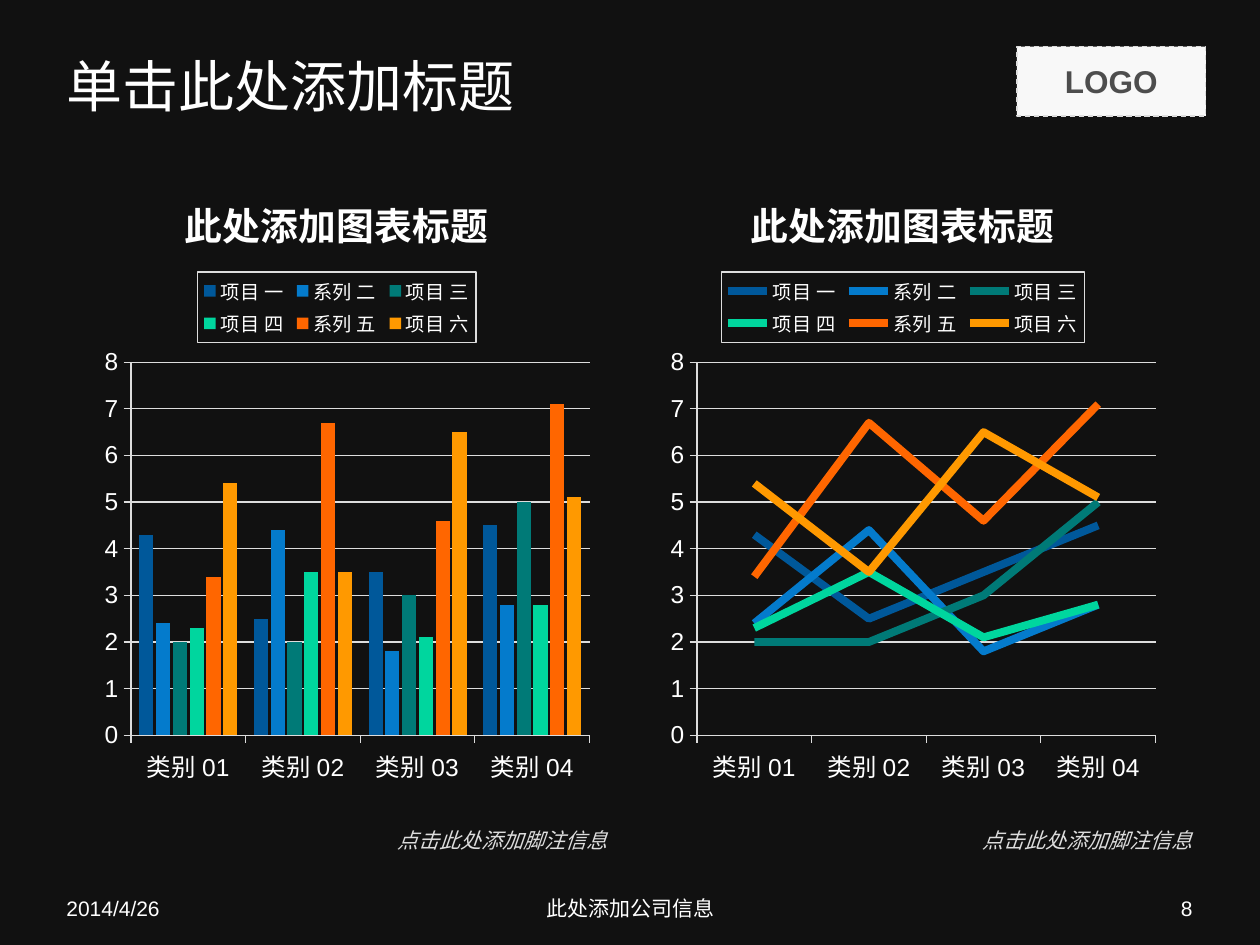
from dataclasses import dataclass
from typing import NamedTuple

from lxml import etree
from pptx import Presentation
from pptx import util as u
from pptx.chart import data as cd
from pptx.dml.color import RGBColor
from pptx.enum import chart as ch, dml, shapes, text
from pptx.oxml.ns import qn


@dataclass(frozen=True)
class Theme:
    back: str = "111111"
    ink: str = "FFFFFF"
    rule: str = "DDDDDD"
    box: str = "F8F8F8"
    mark: str = "4D4D4D"
    head: str = "Montserrat"
    body: str = "Arial"
    title: float = 32
    logo: float = 18
    chart: float = 21.6
    axis: float = 14
    small: float = 12
    key: float = 11
    hair: float = 0.75
    thick: float = 4.5


class Box(NamedTuple):
    left: float
    top: float
    width: float
    height: float

    def cm(self) -> list:
        return [u.Cm(n) for n in self]


class Label(NamedTuple):
    words: str
    box: Box
    side: text.PP_ALIGN
    size: float
    font: str = "Arial"


class Item(NamedTuple):
    name: str
    color: str
    vals: tuple


class Plot(NamedTuple):
    kind: ch.XL_CHART_TYPE
    left: float


T = Theme()
LEFT, MID, RIGHT = text.PP_ALIGN.LEFT, text.PP_ALIGN.CENTER, text.PP_ALIGN.RIGHT
EDGE, FOOT, NOTE = 24.29, 17.93, 4.78
HALF = 12.5

LABELS = [
    Label("单击此处添加标题", Box(1.09, 0.71, 23.2, 2), LEFT, T.title, T.head),
    Label("2014/4/26", Box(1.09, FOOT, 5.92, 0.74), LEFT, T.small),
    Label("此处添加公司信息", Box(8.69, FOOT, 8.05, 0.74), MID, T.small),
    Label("8", Box(EDGE - 5.92, FOOT, 5.92, 0.74), RIGHT, T.small),
]
PLOTS = [
    Plot(ch.XL_CHART_TYPE.COLUMN_CLUSTERED, 1.09),
    Plot(ch.XL_CHART_TYPE.LINE, HALF),
]
CATS = [f"类别 {n:02}" for n in range(1, 5)]
ITEMS = [
    Item("项目 一", "00589A", (4.3, 2.5, 3.5, 4.5)),
    Item("系列 二", "047BCC", (2.4, 4.4, 1.8, 2.8)),
    Item("项目 三", "007A77", (2, 2, 3, 5)),
    Item("项目 四", "00D69E", (2.3, 3.5, 2.1, 2.8)),
    Item("系列 五", "FF6600", (3.4, 6.7, 4.6, 7.1)),
    Item("项目 六", "FF9900", (5.4, 3.5, 6.5, 5.1)),
]
INNER = {"layoutTarget": "inner", "xMode": "edge", "yMode": "edge",
         "x": 0.136, "y": 0.301, "w": 0.811, "h": 0.57}


def rgb(code: str) -> RGBColor:
    return RGBColor.from_string(code)


def style(font, size: float, color: str, face: str = T.body,
          bold: bool = False, slant: bool = False) -> None:
    font.size, font.name = u.Pt(size), face
    font.bold, font.italic = bold, slant
    font.color.rgb = rgb(color)


def stroke(line, color: str, width: float = T.hair) -> None:
    line.color.rgb = rgb(color)
    line.width = u.Pt(width)


def write(frame, words: str, side: text.PP_ALIGN):
    para = frame.paragraphs[0]
    para.alignment = side
    run = para.add_run()
    run.text = words
    return run.font


def add_label(slide, label: Label) -> None:
    frame = slide.shapes.add_textbox(*label.box.cm()).text_frame
    frame.word_wrap = True
    frame.vertical_anchor = text.MSO_ANCHOR.MIDDLE
    style(write(frame, label.words, label.side), label.size, T.ink, label.font)


def add_note(slide, right: float) -> None:
    box = Box(right - NOTE, 16.56, NOTE, 0.76)
    frame = slide.shapes.add_textbox(*box.cm()).text_frame
    frame.word_wrap = False
    frame.auto_size = text.MSO_AUTO_SIZE.SHAPE_TO_FIT_TEXT
    font = write(frame, "点击此处添加脚注信息", RIGHT)
    style(font, T.small, T.rule, slant=True)


def add_logo(slide) -> None:
    box = Box(20.5, 0.94, 3.81, 1.4)
    shape = slide.shapes.add_shape(shapes.MSO_SHAPE.RECTANGLE, *box.cm())
    shape.shadow.inherit = False
    shape.fill.solid()
    shape.fill.fore_color.rgb = rgb(T.box)
    stroke(shape.line, T.rule)
    shape.line.dash_style = dml.MSO_LINE.DASH
    shape.text_frame.vertical_anchor = text.MSO_ANCHOR.MIDDLE
    style(write(shape.text_frame, "LOGO", MID), T.logo, T.mark, bold=True)


def set_inner(chart) -> None:
    area = chart._chartSpace.chart.plotArea
    for old in area.findall(qn("c:layout")):
        area.remove(old)
    layout = etree.Element(qn("c:layout"))
    manual = etree.SubElement(layout, qn("c:manualLayout"))
    for tag, val in INNER.items():
        etree.SubElement(manual, qn(f"c:{tag}")).set("val", str(val))
    area.insert(0, layout)


def set_key(chart) -> None:
    chart.has_legend = True
    key = chart.legend
    key.position = ch.XL_LEGEND_POSITION.TOP
    key.include_in_layout = False
    style(key.font, T.key, T.ink)
    props = etree.Element(qn("c:spPr"))
    line = etree.SubElement(props, qn("a:ln"), w=str(u.Pt(T.hair)))
    fill = etree.SubElement(line, qn("a:solidFill"))
    etree.SubElement(fill, qn("a:srgbClr"), val=T.rule)
    key._element.find(qn("c:txPr")).addprevious(props)


def set_axes(chart) -> None:
    for axis in (chart.category_axis, chart.value_axis):
        axis.major_tick_mark = ch.XL_TICK_MARK.OUTSIDE
        axis.minor_tick_mark = ch.XL_TICK_MARK.NONE
        style(axis.tick_labels.font, T.axis, T.ink)
        stroke(axis.format.line, T.rule)
    axis = chart.value_axis
    axis.minimum_scale, axis.maximum_scale, axis.major_unit = 0, 8, 1
    axis.has_major_gridlines = True
    stroke(axis.major_gridlines.format.line, T.rule)


def add_plot(slide, plot: Plot) -> None:
    data = cd.CategoryChartData()
    data.categories = CATS
    for item in ITEMS:
        data.add_series(item.name, item.vals)
    box = Box(plot.left, 3.33, 11.4, 13.2)
    chart = slide.shapes.add_chart(plot.kind, *box.cm(), data).chart
    style(chart.font, T.logo, T.ink)
    chart.has_title = True
    font = write(chart.chart_title.text_frame, "此处添加图表标题", MID)
    style(font, T.chart, T.ink, bold=True)
    chart.chart_title.include_in_layout = False
    set_inner(chart)
    set_key(chart)
    set_axes(chart)
    body = chart.plots[0]
    body.vary_by_categories = False
    bars = plot.kind == ch.XL_CHART_TYPE.COLUMN_CLUSTERED
    if bars:
        body.gap_width, body.overlap = 117, -18
    for item, line in zip(ITEMS, body.series):
        if bars:
            line.format.fill.solid()
            line.format.fill.fore_color.rgb = rgb(item.color)
        else:
            line.smooth = False
            line.marker.style = ch.XL_MARKER_STYLE.NONE
            stroke(line.format.line, item.color, T.thick)


def main() -> None:
    deck = Presentation()
    deck.slide_width, deck.slide_height = u.Cm(25.4), u.Cm(19.05)
    slide = deck.slides.add_slide(deck.slide_layouts[6])
    slide.background.fill.solid()
    slide.background.fill.fore_color.rgb = rgb(T.back)
    add_logo(slide)
    for label in LABELS:
        add_label(slide, label)
    for right in (EDGE, HALF):
        add_note(slide, right)
    for plot in PLOTS:
        add_plot(slide, plot)
    deck.save("out.pptx")


if __name__ == "__main__":
    main()
